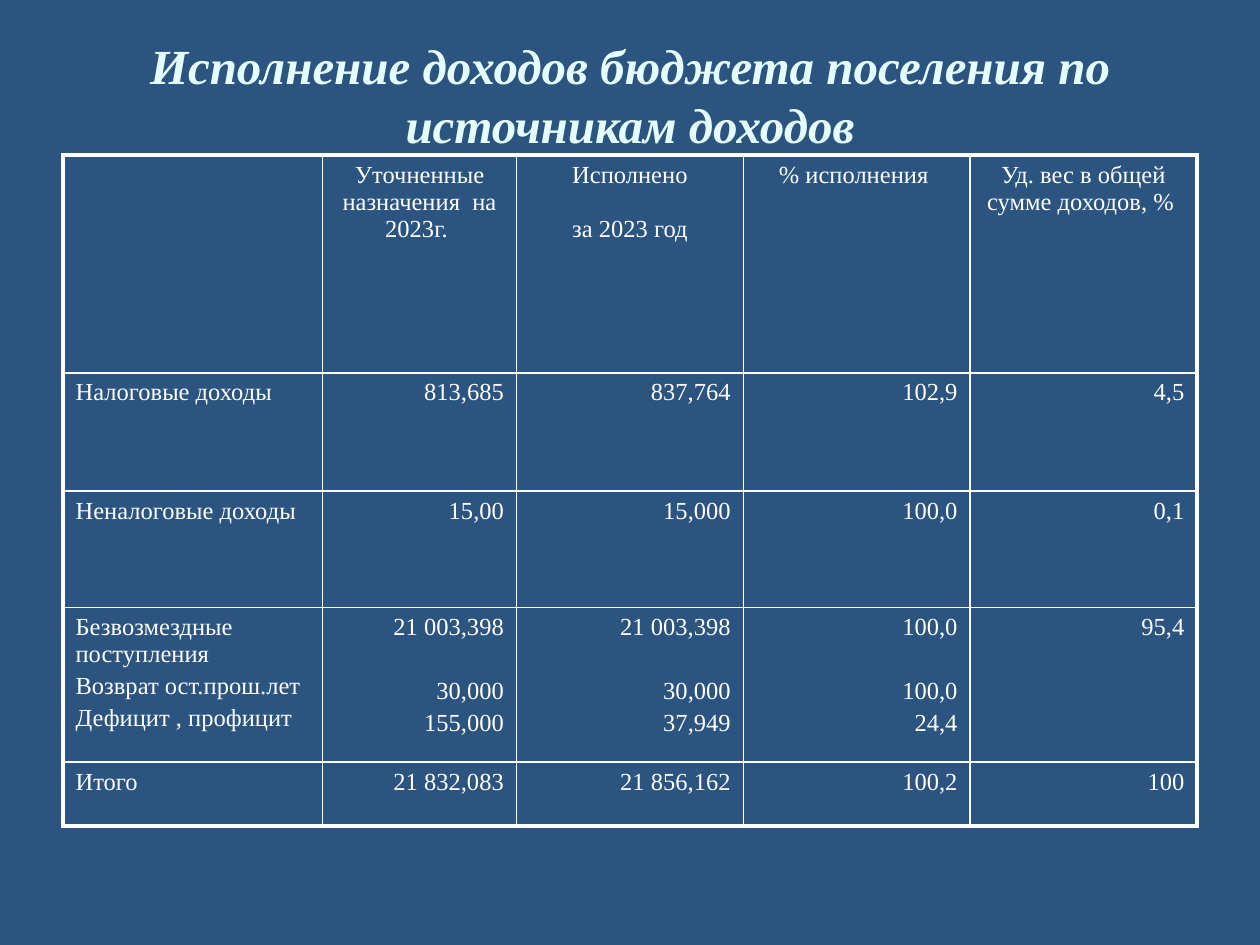
from dataclasses import dataclass

from lxml import etree
from pptx import Presentation
from pptx import util as u
from pptx.dml import color
from pptx.enum import text
from pptx.oxml import ns


@dataclass(frozen=True)
class Theme:
    background: str = "2B5481"
    title: str = "E5FFFF"
    ink: str = "FFFFFF"
    font: str = "Times New Roman"
    title_size: float = 28
    body_size: float = 14
    outer_line: float = 2.25
    inner_line: float = 1


COLUMN_WIDTHS = [148.32, 110.88, 129.6, 129.6, 129.6]
ROW_HEIGHTS = [124.5, 67.5, 66.5, 88.5, 36.5]
PARAGRAPH_GAP = 2.8
HEADER_GAP = 15.5
SUBROW_GAP = 21

ROWS = [
    ["", "Уточненные назначения  на 2023г. ", "Исполнено\nза 2023 год",
     "% исполнения ", "Уд. вес в общей сумме доходов, % "],
    ["Налоговые доходы", "813,685", "837,764", "102,9", "4,5"],
    ["Неналоговые доходы", "15,00", "15,000", "100,0", "0,1"],
    ["Безвозмездные поступления\nВозврат ост.прош.лет\nДефицит , профицит",
     "21 003,398\n30,000\n155,000", "21 003,398\n30,000\n37,949",
     "100,0\n100,0\n24,4", "95,4"],
    ["Итого", "21 832,083", "21 856,162", "100,2", "100"],
]


class SlideBuilder:
    def __init__(self, deck, theme):
        self.theme = theme
        self.page = deck.slides.add_slide(deck.slide_layouts[6])
        fill = self.page.background.fill
        fill.solid()
        fill.fore_color.rgb = color.RGBColor.from_string(theme.background)

    def style(self, para, size, ink, align, bold=False, italic=False):
        para.alignment = align
        for font in [para.font] + [span.font for span in para.runs]:
            font.name = self.theme.font
            font.size = u.Pt(size)
            font.bold = bold
            font.italic = italic
            font.color.rgb = color.RGBColor.from_string(ink)

    def title(self, wording, left, top, width, height):
        box = self.page.shapes.add_textbox(*map(u.Pt, (left, top, width, height)))
        frame = box.text_frame
        frame.word_wrap = True
        frame.vertical_anchor = text.MSO_ANCHOR.MIDDLE
        frame.text = wording
        self.style(frame.paragraphs[0], self.theme.title_size, self.theme.title,
                   text.PP_ALIGN.CENTER, bold=True, italic=True)

    def border(self, cell, side, width):
        properties = cell._tc.get_or_add_tcPr()
        line = etree.SubElement(properties, ns.qn(f"a:ln{side}"), w=str(u.Pt(width)))
        fill = etree.SubElement(line, ns.qn("a:solidFill"))
        etree.SubElement(fill, ns.qn("a:srgbClr"), val=self.theme.ink)

    def cell(self, cell, wording, align, first_gap):
        cell.text_frame.text = wording
        for index, para in enumerate(cell.text_frame.paragraphs):
            if index:
                para.space_before = u.Pt(first_gap if index == 1 else PARAGRAPH_GAP)
            self.style(para, self.theme.body_size, self.theme.ink, align)

    def table(self, rows, left, top, widths, heights):
        frame = self.page.shapes.add_table(
            len(heights), len(widths),
            *map(u.Pt, (left, top, sum(widths), sum(heights))))
        table = frame.table
        table.first_row = table.horz_banding = False
        for column, width in zip(table.columns, widths):
            column.width = u.Pt(width)
        for row, height in zip(table.rows, heights):
            row.height = u.Pt(height)
        last_row, last_column = len(heights) - 1, len(widths) - 1
        for r, row in enumerate(rows):
            for c, wording in enumerate(row):
                cell = table.cell(r, c)
                if r == 0:
                    align, gap = text.PP_ALIGN.CENTER, HEADER_GAP
                elif c == 0:
                    align, gap = text.PP_ALIGN.LEFT, PARAGRAPH_GAP
                else:
                    align, gap = text.PP_ALIGN.RIGHT, SUBROW_GAP
                self.cell(cell, wording, align, gap)
                edges = {"L": c == 0, "R": c == last_column,
                         "T": r == 0, "B": r == last_row}
                for side, outer in edges.items():
                    self.border(cell, side, self.theme.outer_line if outer
                                else self.theme.inner_line)
                cell.fill.background()


def main():
    deck = Presentation()
    deck.slide_width, deck.slide_height = u.Pt(720), u.Pt(540)
    builder = SlideBuilder(deck, Theme())
    builder.title("Исполнение доходов бюджета поселения по источникам доходов",
                  36, 30.24, 648, 47.52)
    builder.table(ROWS, 36, 88.56, COLUMN_WIDTHS, ROW_HEIGHTS)
    deck.save("out.pptx")


if __name__ == "__main__":
    main()
